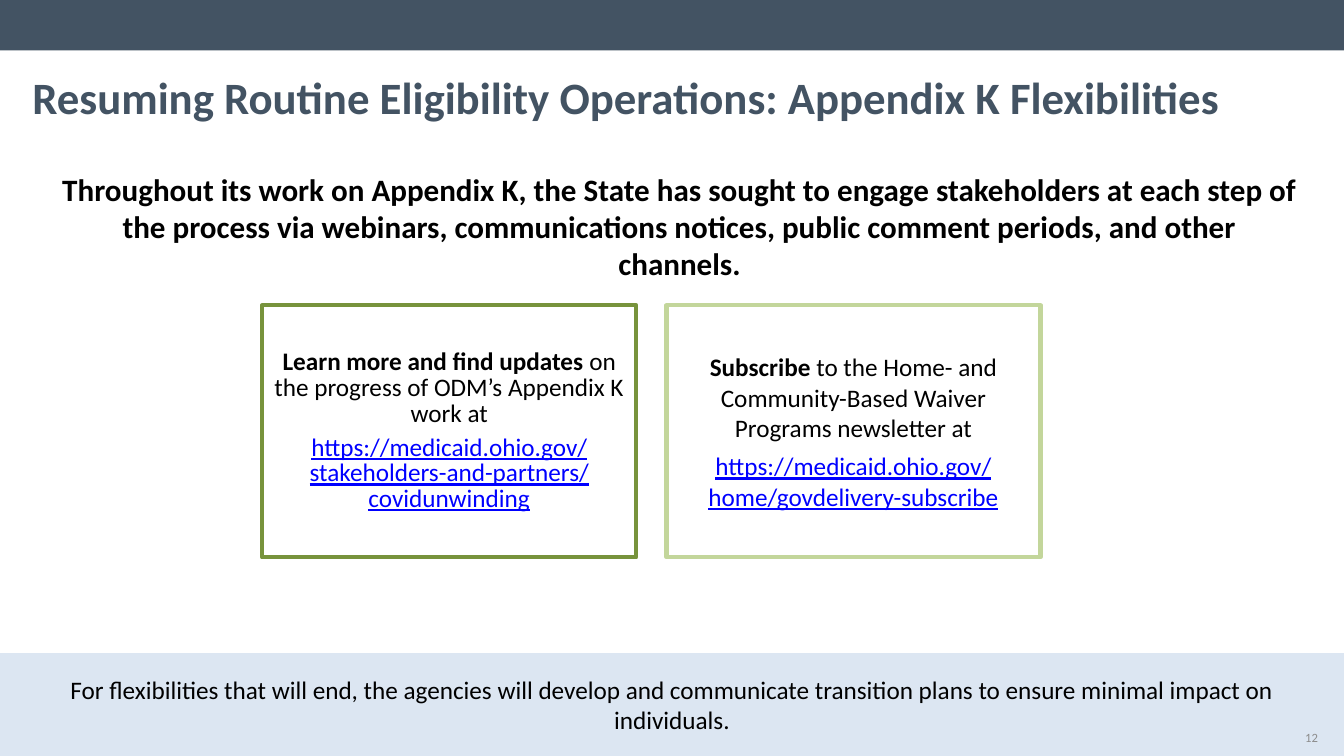
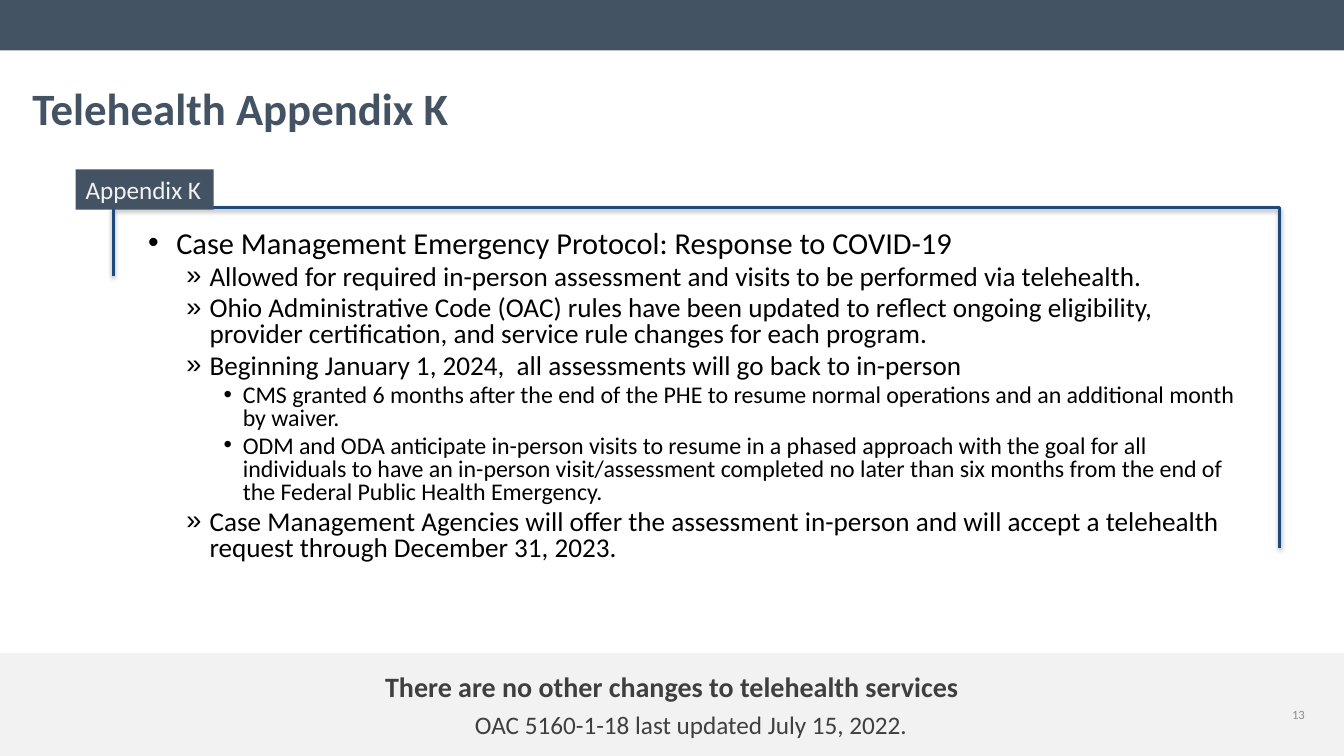
import pptx
import pptx.dml.color
import pptx.enum.shapes
import pptx.enum.text
import pptx.oxml
import pptx.oxml.ns
import pptx.util
from lxml import etree

Inches, Pt = pptx.util.Inches, pptx.util.Pt
ALIGN = pptx.enum.text.PP_ALIGN
ANCHOR = pptx.enum.text.MSO_ANCHOR
RECT = pptx.enum.shapes.MSO_SHAPE.RECTANGLE

FONT = "Calibri"
SLATE, BLACK, BLUE, NAVY = "435363", "000000", "0000FF", "1F497D"
PALE, SKY, GRAY, DARK = "F2F2F2", "DCE6F2", "8C8C8C", "3F3F3F"
WIDE, HIGH = 13.33, 7.5

LEAD = ("Throughout its work on Appendix K, the State has sought to engage "
        "stakeholders at each step of the process via webinars, communications "
        "notices, public comment periods, and other channels.")

# Border colour, line spacing, bold start, rest, address
CARDS = [
    ("77933C", 0.85, "Learn more and find updates ",
     "on the progress of ODM’s Appendix K work at",
     "https://medicaid.ohio.gov/stakeholders-and-partners/covidunwinding"),
    ("C3D69B", 1, "Subscribe",
     " to the Home- and Community-Based Waiver Programs newsletter at",
     "https://medicaid.ohio.gov/home/govdelivery-subscribe"),
]

PLANS = ("For flexibilities that will end, the agencies will develop and "
         "communicate transition plans to ensure minimal impact on individuals.")

# Bullet, size, left indent, hanging indent for each level
LEVELS = [("•", 21.7, 0.28, 0.28), ("»", 19.4, 0.61, 0.23), ("•", 17.1, 0.94, 0.19)]

POINTS = [
    (0, "Case Management Emergency Protocol: Response to COVID-19"),
    (1, "Allowed for required in-person assessment and visits to be performed "
        "via telehealth."),
    (1, "Ohio Administrative Code (OAC) rules have been updated to reflect "
        "ongoing eligibility, provider certification, and service rule changes "
        "for each program."),
    (1, "Beginning January 1, 2024,  all assessments will go back to in-person"),
    (2, "CMS granted 6 months after the end of the PHE to resume normal "
        "operations and an additional month by waiver."),
    (2, "ODM and ODA anticipate in-person visits to resume in a phased approach "
        "with the goal for all individuals to have an in-person visit/assessment "
        "completed no later than six months from the end of the Federal Public "
        "Health Emergency."),
    (1, "Case Management Agencies will offer the assessment in-person and will "
        "accept a telehealth request through December 31, 2023."),
]


def color(text):
    return pptx.dml.color.RGBColor.from_string(text)


def place(shape, left, top, width, height):
    shape.left, shape.top = Inches(left), Inches(top)
    shape.width, shape.height = Inches(width), Inches(height)


def write(para, text, size, tint=BLACK, bold=False, under=False):
    run = para.add_run()
    run.text = text
    font = run.font
    font.name, font.size, font.bold = FONT, Pt(size), bold
    font.color.rgb = color(tint)
    if under:
        font.underline = True


def start(frame, align=ALIGN.LEFT, anchor=ANCHOR.TOP):
    """Prepare a text frame and return its first paragraph."""
    frame.word_wrap = True
    frame.vertical_anchor = anchor
    frame.paragraphs[0].alignment = align
    return frame.paragraphs[0]


def follow(frame, align=ALIGN.LEFT):
    """Add a further paragraph."""
    para = frame.add_paragraph()
    para.alignment = align
    return para


def box(slide, left, top, width, height, fill=None, line=None):
    shape = slide.shapes.add_shape(
        RECT, Inches(left), Inches(top), Inches(width), Inches(height))
    shape.shadow.inherit = False
    if fill:
        shape.fill.solid()
        shape.fill.fore_color.rgb = color(fill)
    else:
        shape.fill.background()
    if line:
        shape.line.color.rgb = color(line)
        shape.line.width = Pt(3)
    else:
        shape.line.fill.background()
    return shape


def label(slide, left, top, width, height):
    return slide.shapes.add_textbox(
        Inches(left), Inches(top), Inches(width), Inches(height)).text_frame


def page(deck, title, top, height, number, left, low):
    """Add a slide with the shared band, title and page number."""
    slide = deck.slides.add_slide(deck.slide_layouts[5])
    box(slide, 0, 0, WIDE, 0.5, SLATE)
    head = slide.shapes.title
    place(head, 0.22, top, 12.89, height)
    write(start(head.text_frame), title, 32, SLATE, True)
    return slide, (number, left, low)


def finish(slide, mark):
    number, left, low = mark
    frame = label(slide, left, low, 3.11, 0.4)
    write(start(frame, ALIGN.RIGHT, ANCHOR.MIDDLE), number, 9, GRAY)


def footer(slide, fill):
    frame = box(slide, 0, 6.48, WIDE, 1.02, fill).text_frame
    return frame, start(frame, ALIGN.CENTER, ANCHOR.MIDDLE)


def bullet(para, level):
    sign, size, left, hang = LEVELS[level]
    props = para._p.get_or_add_pPr()
    props.set("marL", str(Inches(left)))
    props.set("indent", str(-Inches(hang)))
    if level:
        props.set("lvl", str(level))
    font = etree.SubElement(props, pptx.oxml.ns.qn("a:buFont"))
    font.set("typeface", "Arial")
    char = etree.SubElement(props, pptx.oxml.ns.qn("a:buChar"))
    char.set("char", sign)
    para.line_spacing = 0.8
    return size


def frame_line(slide, left, top, right, drop, low):
    """Draw the open outline around the bullets, with a soft shadow."""
    pen = slide.shapes.build_freeform(Inches(left), Inches(drop))
    pen.add_line_segments(
        [(Inches(x), Inches(y)) for x, y in
         ((left, top), (right, top), (right, low))], close=False)
    shape = pen.convert_to_shape()
    shape.fill.background()
    shape.line.color.rgb = color(NAVY)
    shape.line.width = Pt(2.25)
    shape.shadow.inherit = False
    effects = shape.element.spPr.find(pptx.oxml.ns.qn("a:effectLst"))
    effects.append(pptx.oxml.parse_xml(
        f'<a:outerShdw {pptx.oxml.ns.nsdecls("a")} blurRad="{Pt(3.1)}" '
        f'dist="{Pt(1.8)}" dir="5400000" rotWithShape="0">'
        '<a:srgbClr val="000000"><a:alpha val="35000"/></a:srgbClr>'
        '</a:outerShdw>'))


def outreach(deck):
    slide, mark = page(
        deck, "Resuming Routine Eligibility Operations: Appendix K Flexibilities",
        0.64, 0.75, "12", 10.06, 7.12)
    lead = label(slide, 0.48, 1.64, 12.52, 0.91)
    write(start(lead, ALIGN.CENTER), LEAD, 22.2, bold=True)
    wide, gap = 3.71, 0.3
    for i, (edge, space, bold, rest, link) in enumerate(CARDS):
        card = box(slide, 2.6 + i * (wide + gap), 3.03, wide, 2.5, line=edge)
        text = card.text_frame
        para = start(text, ALIGN.CENTER, ANCHOR.MIDDLE)
        para.space_after = Pt(6)
        write(para, bold, 18, bold=True)
        write(para, rest, 18)
        last = follow(text, ALIGN.CENTER)
        write(last, link, 18, BLUE, under=True)
        para.line_spacing = last.line_spacing = space
    write(footer(slide, SKY)[1], PLANS, 18)
    finish(slide, mark)


def telehealth(deck):
    slide, mark = page(
        deck, "Telehealth Appendix K", 0.75, 0.99, "13", 9.93, 6.89)
    body = label(slide, 1.37, 2.24, 11.08, 3.7)
    for i, (level, text) in enumerate(POINTS):
        para = follow(body) if i else start(body)
        size = bullet(para, level)
        if i:
            para.space_before = Pt(round(size * 0.2, 1))
        write(para, text, size)
    frame_line(slide, 1.13, 2.06, 12.69, 2.74, 5.44)
    tag = box(slide, 0.75, 1.68, 1.37, 0.4, SLATE)
    write(start(tag.text_frame), "Appendix K", 18, PALE)
    frame, first = footer(slide, PALE)
    write(first, "There are no other changes to telehealth services", 20, DARK, True)
    note = follow(frame, ALIGN.CENTER)
    note._p.get_or_add_pPr().set("marL", str(Inches(0.38)))
    note.space_before = Pt(5)
    write(note, "OAC 5160-1-18 last updated July 15, 2022.", 18, DARK)
    finish(slide, mark)


def main():
    deck = pptx.Presentation()
    deck.slide_width, deck.slide_height = Inches(WIDE), Inches(HIGH)
    outreach(deck)
    telehealth(deck)
    deck.save("out.pptx")


if __name__ == "__main__":
    main()
